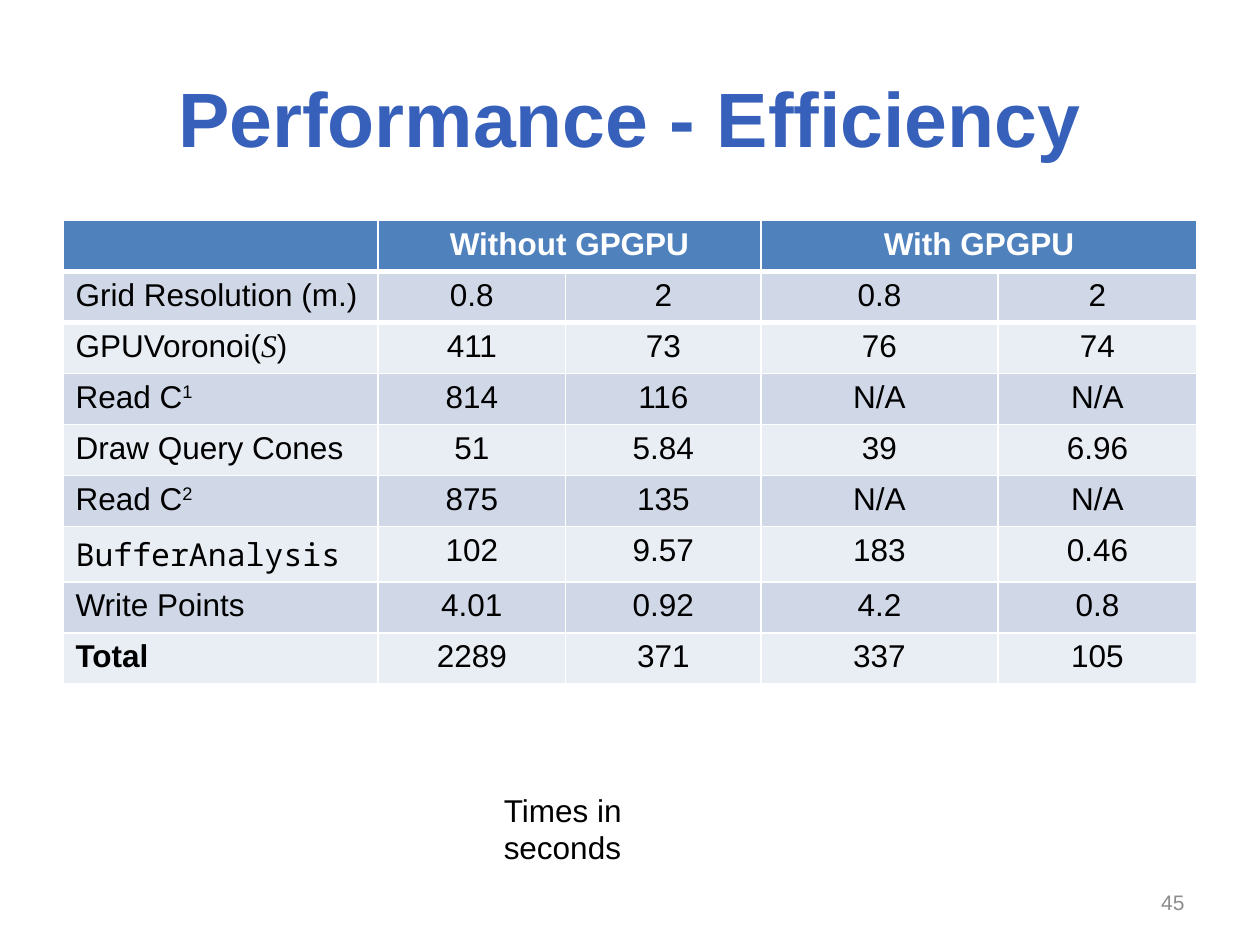
from lxml.etree import SubElement
from pptx import Presentation
from pptx.dml.color import RGBColor
from pptx.enum.text import MSO_ANCHOR, PP_ALIGN
from pptx.oxml.ns import qn
from pptx.util import Inches, Pt

SLIDE_WIDTH, SLIDE_HEIGHT = Inches(10), Inches(7.5)
MARGIN = 0.05
CONTENT_WIDTH = 1 - 2 * MARGIN
COLUMN_WIDTHS = [2.5, 1.49, 1.55, 1.88, 1.58]
TABLE_HEIGHT = 3.68
TALL_ROW, TALL_ROW_HEIGHT = 6, 0.44
HEADER_FILL = "4F81BD"
BAND_FILLS = ["D0D8E8", "E9EDF4"]

GROUPS = ["Without GPGPU", "With GPGPU"]
TIMINGS = [
    ([("Grid Resolution (m.)", {})], ["0.8", "2", "0.8", "2"]),
    ([("GPUVoronoi(", {}), ("S", {"font": "Times New Roman", "italic": True}), (")", {})],
     ["411", "73", "76", "74"]),
    ([("Read C", {}), ("1", {"baseline": 30})], ["814", "116", "N/A", "N/A"]),
    ([("Draw Query Cones", {})], ["51", "5.84", "39", "6.96"]),
    ([("Read C", {}), ("2", {"baseline": 30})], ["875", "135", "N/A", "N/A"]),
    ([("BufferAnalysis", {"font": "Noto Sans Mono"})], ["102", "9.57", "183", "0.46"]),
    ([("Write Points", {})], ["4.01", "0.92", "4.2", "0.8"]),
    ([("Total", {"bold": True})], ["2289", "371", "337", "105"]),
]


def color(hex_string):
    return RGBColor.from_string(hex_string)


def share_box(left, top, width, height):
    return (round(SLIDE_WIDTH * left), round(SLIDE_HEIGHT * top),
            round(SLIDE_WIDTH * width), round(SLIDE_HEIGHT * height))


def write(paragraph, text, size=18, font="Arial", fill="000000", bold=False,
          italic=False, baseline=0, align=PP_ALIGN.LEFT):
    paragraph.alignment = align
    run = paragraph.add_run()
    run.text = text
    run.font.size = Pt(size)
    run.font.name = font
    run.font.bold = bold
    run.font.italic = italic
    run.font.color.rgb = color(fill)
    if baseline:
        run._r.get_or_add_rPr().set("baseline", str(baseline * 1000))


def add_label(slide, box, text, anchor=MSO_ANCHOR.MIDDLE, wrap=True, **style):
    frame = slide.shapes.add_textbox(*box).text_frame
    frame.word_wrap = wrap
    frame.vertical_anchor = anchor
    write(frame.paragraphs[0], text, **style)


def fill_cell(cell, fill):
    cell.fill.solid()
    cell.fill.fore_color.rgb = color(fill)


def add_border(cell, side, points, hex_string="FFFFFF"):
    properties = cell._tc.get_or_add_tcPr()
    line = SubElement(properties, qn(f"a:{side}"), w=str(Pt(points)))
    SubElement(SubElement(line, qn("a:solidFill")), qn("a:srgbClr"), val=hex_string)
    properties.insert(0, line)


def add_timing_table(slide, box):
    width, height = box[2:]
    table = slide.shapes.add_table(len(TIMINGS) + 1, len(COLUMN_WIDTHS), *box).table
    for column, share in zip(table.columns, COLUMN_WIDTHS):
        column.width = round(width * share / sum(COLUMN_WIDTHS))
    tall_height = Inches(TALL_ROW_HEIGHT)
    for row in table.rows:
        row.height = (height - tall_height) // len(TIMINGS)
    table.rows[TALL_ROW].height = tall_height

    for cell in table.rows[0].cells:
        fill_cell(cell, HEADER_FILL)
        add_border(cell, "lnB", 3)
    for cell in table.rows[1].cells:
        add_border(cell, "lnT", 3)
    for index, group in enumerate(GROUPS):
        first = 1 + 2 * index
        header = table.cell(0, first)
        header.merge(table.cell(0, first + 1))
        write(header.text_frame.paragraphs[0], group, fill="FFFFFF", bold=True,
              align=PP_ALIGN.CENTER)

    for row, (label, values) in enumerate(TIMINGS, start=1):
        for cell in table.rows[row].cells:
            fill_cell(cell, BAND_FILLS[(row - 1) % 2])
        for text, style in label:
            write(table.cell(row, 0).text_frame.paragraphs[0], text, **style)
        for column, value in enumerate(values, start=1):
            write(table.cell(row, column).text_frame.paragraphs[0], value,
                  align=PP_ALIGN.CENTER)


def build_slide(presentation):
    slide = presentation.slides.add_slide(presentation.slide_layouts[6])
    add_label(slide, share_box(MARGIN, 0.04, CONTENT_WIDTH, 1 / 6),
              "Performance - Efficiency", size=44, fill="3760BB", bold=True,
              align=PP_ALIGN.CENTER)
    add_timing_table(slide, share_box(MARGIN, 7 / 30, CONTENT_WIDTH, TABLE_HEIGHT / 7.5))
    add_label(slide, share_box(0.72, 0.93, 0.23, 0.05), "45", size=12,
              fill="8C8C8C", align=PP_ALIGN.RIGHT)
    add_label(slide, share_box(0.39, 0.83, 0.21, 0.05), "Times in seconds",
              anchor=MSO_ANCHOR.TOP, wrap=False)


def main():
    presentation = Presentation()
    presentation.slide_width = SLIDE_WIDTH
    presentation.slide_height = SLIDE_HEIGHT
    build_slide(presentation)
    presentation.save("out.pptx")


if __name__ == "__main__":
    main()
